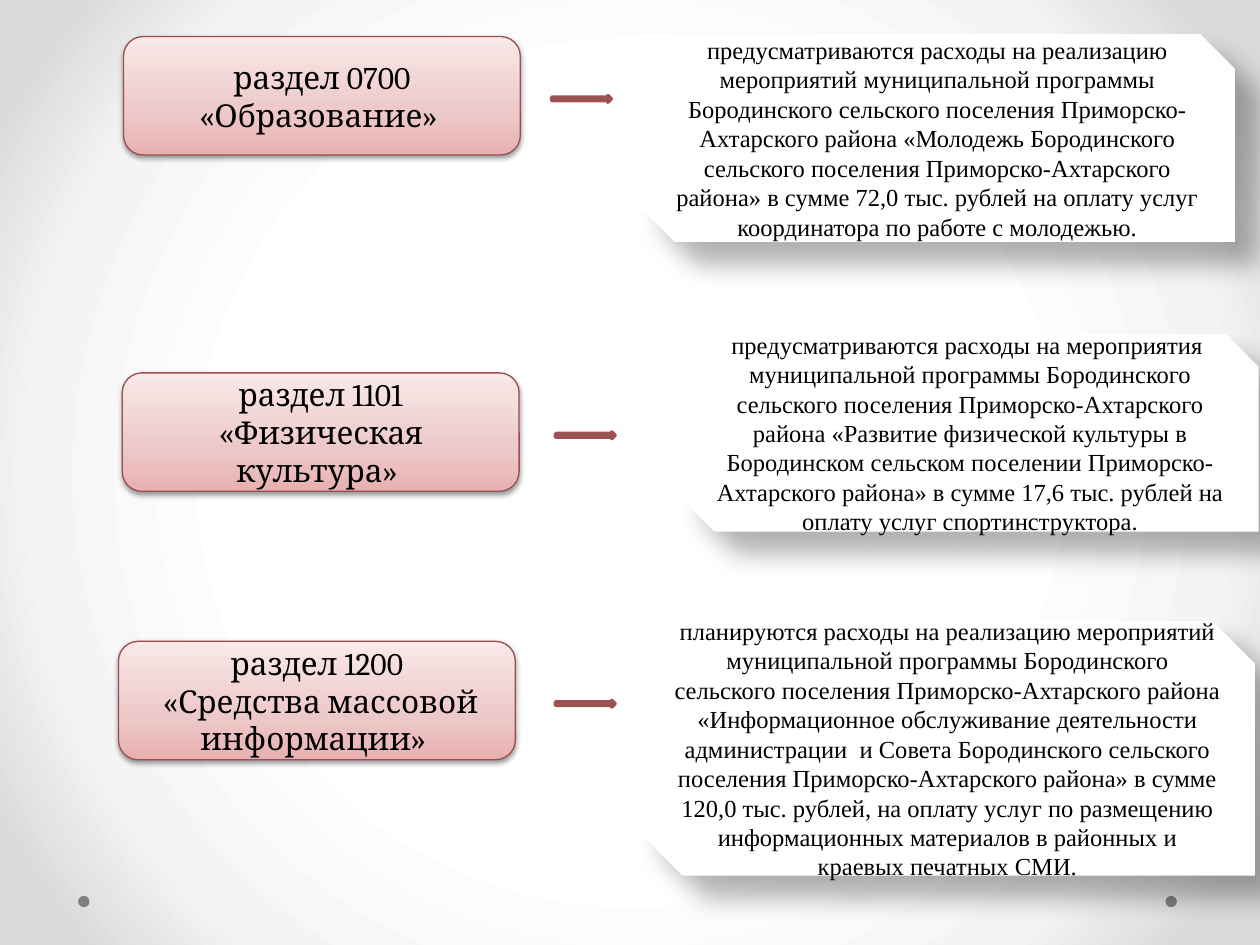
from dataclasses import dataclass

from lxml.etree import SubElement
from pptx import Presentation
from pptx.dml.color import RGBColor
from pptx.enum.shapes import MSO_SHAPE
from pptx.enum.text import MSO_ANCHOR, PP_ALIGN
from pptx.oxml.ns import qn
from pptx.util import Inches, Pt

UNIT = 0.1


@dataclass(frozen=True)
class Theme:
    """Colours, fonts, type sizes and effects of the slide."""
    ink: str = "000000"
    paper: str = "FFFFFF"
    rim: str = "9A4E4E"
    arrow: str = "9C5252"
    dot: str = "808080"
    back: tuple = ((50, "FFFFFF"), (76, "F4F4F4"), (92, "DADADA"))
    rose: tuple = ((0, "E8B0B0"), (35, "EDC8C8"), (100, "F9E9E9"))
    label: tuple = ("Cambria", 18)
    note: tuple = ("Times New Roman", 14)
    soft: tuple = (38, 3.1, 1.6, 90)
    deep: tuple = (30, 15, 18, 45)


THEME = Theme()

ROWS = [
    ((9.8, 2.9, 31.5, 9.4), (50.8, 2.7, 47.2, 16.5), 43.8,
     ["раздел 0700 «Образование» "],
     "предусматриваются расходы на реализацию мероприятий муниципальной программы "
     "Бородинского сельского поселения Приморско-Ахтарского района «Молодежь "
     "Бородинского сельского поселения Приморско-Ахтарского района» в сумме 72,0 тыс. "
     "рублей на оплату услуг координатора по работе с молодежью."),
    ((9.7, 29.6, 31.5, 9.4), (54.1, 26.5, 45.8, 15.7), 44.1,
     ["раздел 1101 «Физическая культура» "],
     "предусматриваются расходы на мероприятия  муниципальной программы Бородинского "
     "сельского поселения Приморско-Ахтарского района «Развитие физической культуры в "
     "Бородинском сельском поселении Приморско-Ахтарского района» в сумме 17,6 тыс. "
     "рублей на оплату услуг спортинструктора."),
    ((9.4, 50.9, 31.5, 9.4), (50.8, 49.3, 48.8, 20.2), 44.1,
     ["раздел 1200", " «Средства массовой информации» "],
     "планируются расходы на реализацию мероприятий муниципальной программы "
     "Бородинского сельского поселения Приморско-Ахтарского района «Информационное "
     "обслуживание деятельности администрации  и Совета Бородинского сельского "
     "поселения Приморско-Ахтарского района» в сумме 120,0 тыс. рублей, на оплату "
     "услуг по размещению информационных материалов в районных и краевых печатных СМИ."),
]


def blend(fill, root, stops):
    """Give a fill a gradient with the listed stops and return its element."""
    fill.gradient()
    grad = next(root.iter(qn("a:gradFill")))
    items = grad.find(qn("a:gsLst"))
    for old in list(items):
        items.remove(old)
    for place, tone in stops:
        stop = SubElement(items, qn("a:gs"), pos=str(place * 1000))
        SubElement(stop, qn("a:srgbClr"), val=tone)
    return grad


def shade(shape, alpha, blur, gap, angle):
    """Add an outer shadow to a shape."""
    effects = shape._element.spPr.find(qn("a:effectLst"))
    outer = SubElement(effects, qn("a:outerShdw"), blurRad=str(Pt(blur)),
                       dist=str(Pt(gap)), dir=str(angle * 60000),
                       algn="ctr", rotWithShape="0")
    tone = SubElement(outer, qn("a:srgbClr"), val=THEME.ink)
    SubElement(tone, qn("a:alpha"), val=str(alpha * 1000))


def place(slide, kind, box, fill=None, line=None, width=0.75, shadow=None):
    """Draw a preset shape in a box of grid units."""
    shape = slide.shapes.add_shape(kind, *(Inches(part * UNIT) for part in box))
    shape.shadow.inherit = False
    if fill:
        shape.fill.solid()
        shape.fill.fore_color.rgb = RGBColor.from_string(fill)
    if line:
        shape.line.color.rgb = RGBColor.from_string(line)
        shape.line.width = Pt(width)
    else:
        shape.line.fill.background()
    if shadow:
        shade(shape, *shadow)
    return shape


def write(shape, texts, font, size, color=THEME.ink):
    """Write centred paragraphs in a shape."""
    frame = shape.text_frame
    frame.word_wrap = True
    frame.vertical_anchor = MSO_ANCHOR.MIDDLE
    for index, text in enumerate(texts):
        para = frame.add_paragraph() if index else frame.paragraphs[0]
        para.alignment = PP_ALIGN.CENTER
        run = para.add_run()
        run.text = text
        run.font.name, run.font.size = font, Pt(size)
        run.font.color.rgb = RGBColor.from_string(color)


def paint(slide):
    """Paint the round background gradient and the two dots at the foot."""
    grad = blend(slide.background.fill, slide._element, THEME.back)
    grad.remove(grad.find(qn("a:lin")))
    ring = SubElement(grad, qn("a:path"), path="circle")
    SubElement(ring, qn("a:fillToRect"), l="50000", t="50000", r="50000", b="50000")
    for left in (92.5, 6.2):
        place(slide, MSO_SHAPE.OVAL, (left, 71.1, 0.9, 0.9), THEME.dot)


def label(slide, box, texts):
    """Draw the rounded label of a budget section."""
    card = place(slide, MSO_SHAPE.ROUNDED_RECTANGLE, box,
                 line=THEME.rim, shadow=THEME.soft)
    blend(card.fill, card._element, THEME.rose)
    card.fill.gradient_angle = 90
    write(card, texts, *THEME.label)


def note(slide, box, text):
    """Draw the snipped card that explains a budget section."""
    card = place(slide, MSO_SHAPE.SNIP_2_DIAG_RECTANGLE, box,
                 THEME.paper, shadow=THEME.deep)
    write(card, [text], *THEME.note)


def row(slide, box, side, start, texts, detail):
    """Place a label, its note and the arrow level with the label's middle."""
    label(slide, box, texts)
    note(slide, side, detail)
    middle = box[1] + box[3] / 2
    place(slide, MSO_SHAPE.RIGHT_ARROW, (start, middle, 4.7, 0.5),
          THEME.paper, THEME.arrow, 2.25)


def main():
    """Build and save the slide."""
    deck = Presentation()
    deck.slide_width, deck.slide_height = Inches(10), Inches(7.5)
    slide = deck.slides.add_slide(deck.slide_layouts[6])
    paint(slide)
    for parts in ROWS:
        row(slide, *parts)
    deck.save("out.pptx")


if __name__ == "__main__":
    main()
